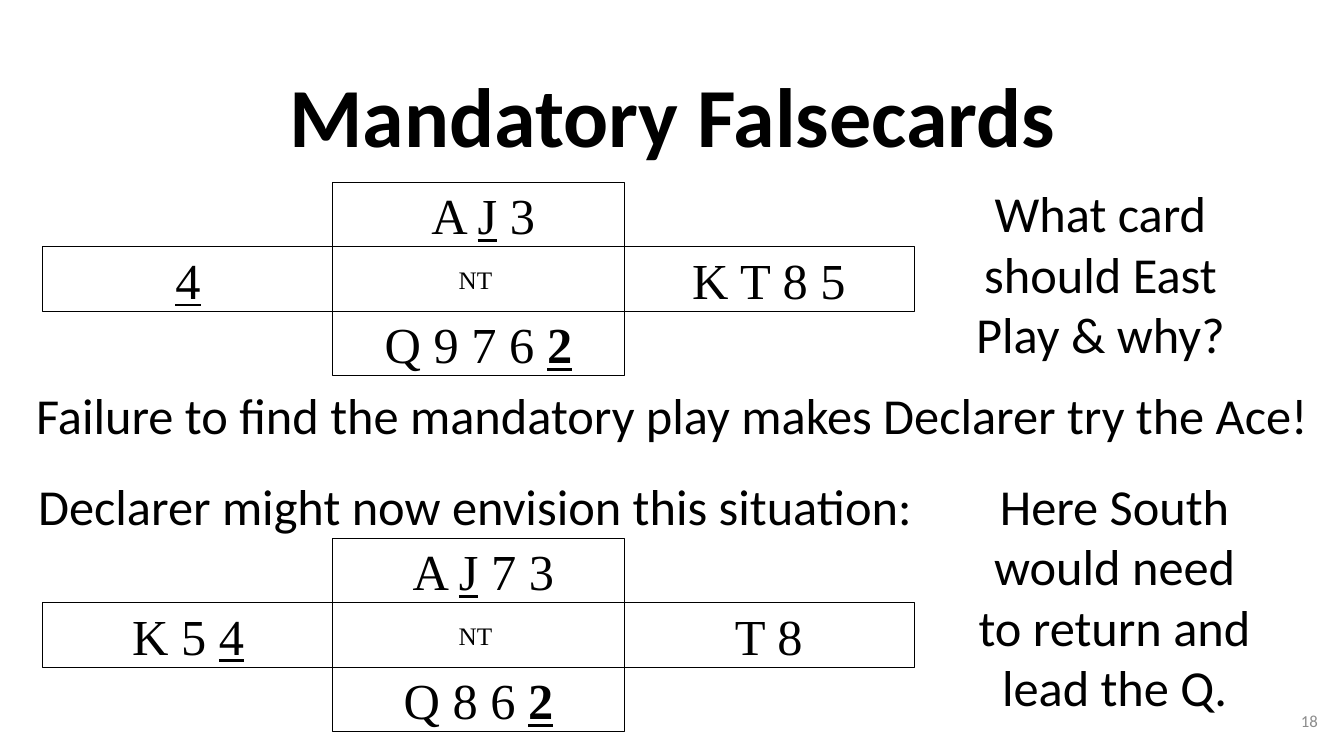
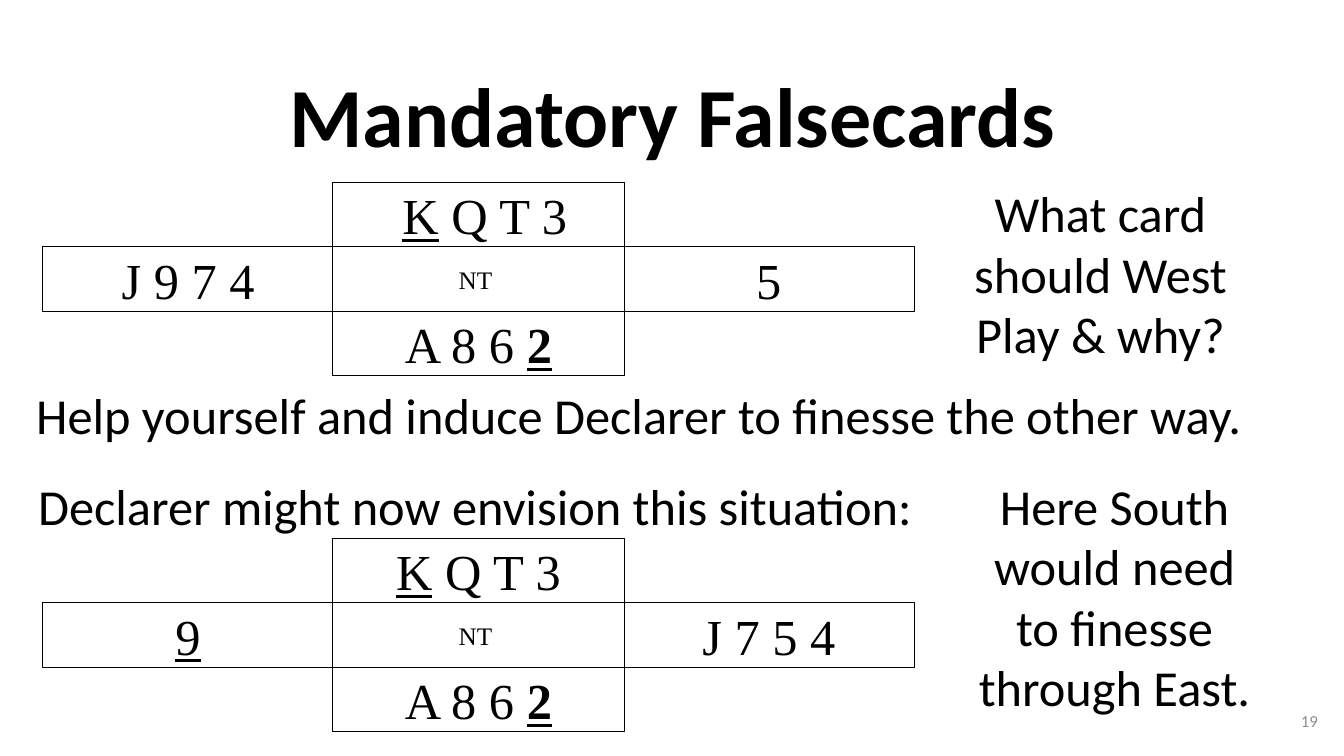
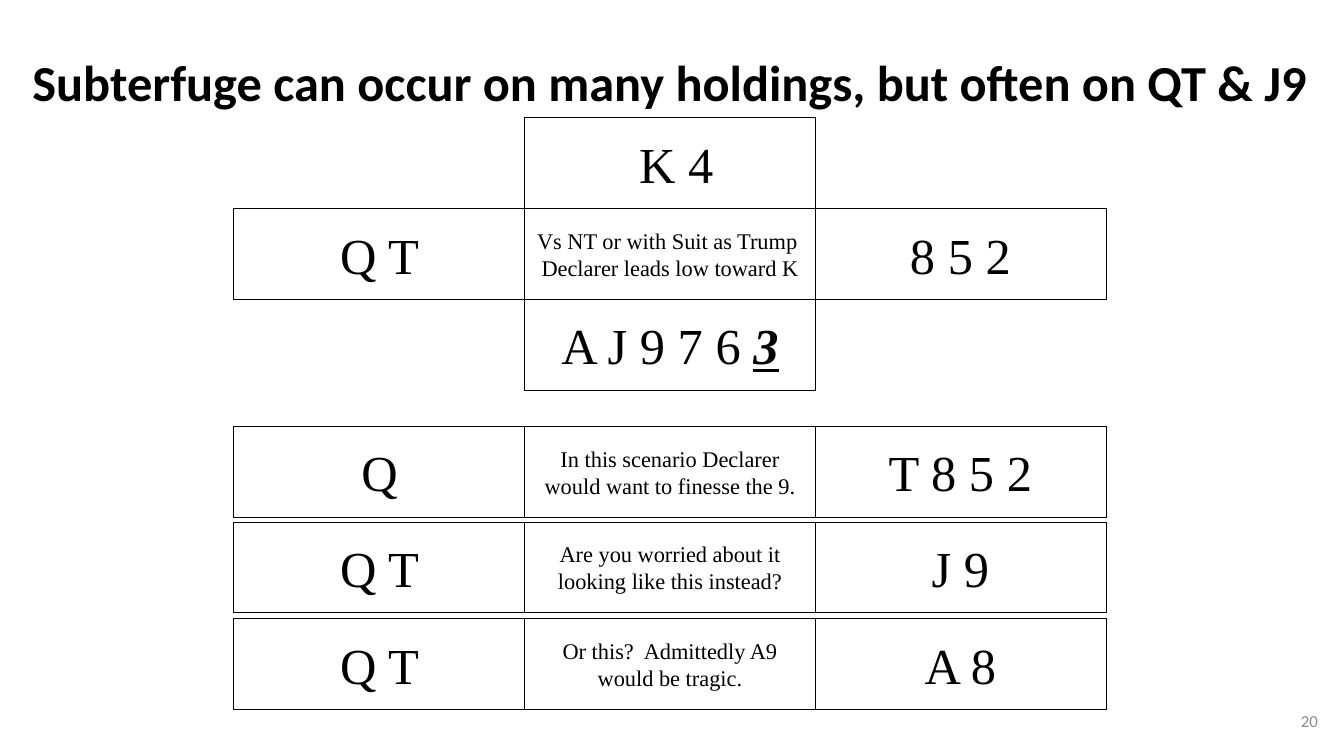
from dataclasses import dataclass
from typing import NamedTuple

from pptx import Presentation
from pptx.dml.color import RGBColor
from pptx.enum.shapes import MSO_SHAPE
from pptx.enum.text import MSO_ANCHOR, PP_ALIGN
from pptx.util import Inches, Pt

BLACK = RGBColor(0x00, 0x00, 0x00)
WHITE = RGBColor(0xFF, 0xFF, 0xFF)
GRAY = RGBColor(0x8C, 0x8C, 0x8C)
TEXT_FONT = "Calibri"
CARD_FONT = "Times New Roman"
BODY_SIZE = 36

RECTANGLE = MSO_SHAPE.RECTANGLE
TOP, MIDDLE = MSO_ANCHOR.TOP, MSO_ANCHOR.MIDDLE
LEFT, CENTER, RIGHT = PP_ALIGN.LEFT, PP_ALIGN.CENTER, PP_ALIGN.RIGHT

CELL_WIDTH = 2.89
COLUMN_STEP = 2.88


class Run(NamedTuple):
    text: str
    underline: bool = False
    bold: bool = False
    italic: bool = False


Hand = tuple[Run, ...]


@dataclass
class Deal:
    """Hands around a central note; north and south may be absent."""
    west: Hand
    east: Hand
    notes: tuple[str, ...]
    north: Hand = ()
    south: Hand = ()


@dataclass
class DealGrid:
    left: float
    row_height: float
    note_size: int


@dataclass
class FalsecardSlide:
    question: str
    advice: str
    conclusion: str
    actual: Deal
    envisioned: Deal
    number: int


def hand(text: str) -> Hand:
    return (Run(text),)


def played(card: str) -> Run:
    return Run(card, underline=True)


def led(card: str, italic: bool = False) -> Run:
    return Run(card, underline=True, bold=True, italic=italic)


# Text
def add_text(slide, box: tuple[float, float, float, float], text: str,
             size: int = BODY_SIZE, align=LEFT, anchor=TOP, bold: bool = False,
             color: RGBColor = BLACK, spacing: float = 1.0) -> None:
    tf = slide.shapes.add_textbox(*map(Inches, box)).text_frame
    tf.word_wrap = True
    tf.vertical_anchor = anchor
    p = tf.paragraphs[0]
    p.text = text
    p.alignment = align
    p.line_spacing = spacing
    p.font.name = TEXT_FONT
    p.font.size = Pt(size)
    p.font.bold = bold
    p.font.color.rgb = color


def add_number(slide, number: int) -> None:
    add_text(slide, (10.17, 6.95, 3, 0.4), str(number), 12, RIGHT, MIDDLE,
             color=GRAY)


# Card diagrams
def add_cell(shapes, left: float, top: float, height: float,
             lines: list[Hand], size: int) -> None:
    sp = shapes.add_shape(RECTANGLE, Inches(left), Inches(top),
                          Inches(CELL_WIDTH), Inches(height))
    sp.shadow.inherit = False
    sp.fill.solid()
    sp.fill.fore_color.rgb = WHITE
    sp.line.color.rgb = BLACK
    sp.line.width = Pt(0.75)
    tf = sp.text_frame
    tf.word_wrap = True
    tf.vertical_anchor = MIDDLE
    for i, line in enumerate(lines):
        p = tf.add_paragraph() if i else tf.paragraphs[0]
        p.alignment = CENTER
        p.font.name = CARD_FONT
        p.font.size = Pt(size)
        p.font.color.rgb = BLACK
        for run in line:
            r = p.add_run()
            r.text = run.text
            if run.underline:
                r.font.underline = True
            if run.bold:
                r.font.bold = True
            if run.italic:
                r.font.italic = True


def add_deal(slide, deal: Deal, grid: DealGrid, middle_top: float) -> None:
    shapes = slide.shapes.add_group_shape().shapes
    # Column, row relative to the middle, contents
    hands = ((1, -1, deal.north), (0, 0, deal.west),
             (2, 0, deal.east), (1, 1, deal.south))
    for column, row, cards in hands:
        if cards:
            add_cell(shapes, grid.left + column * COLUMN_STEP,
                     middle_top + row * grid.row_height, grid.row_height,
                     [cards], BODY_SIZE)
    add_cell(shapes, grid.left + COLUMN_STEP, middle_top, grid.row_height,
             [hand(note) for note in deal.notes], grid.note_size)


# Slides
def add_falsecards(prs, content: FalsecardSlide) -> None:
    slide = prs.slides.add_slide(prs.slide_layouts[6])
    grid = DealGrid(left=0.42, row_height=0.64, note_size=18)
    add_text(slide, (1.67, 0.44, 10, 1.51), "Mandatory Falsecards", 60,
             CENTER, MIDDLE, bold=True, spacing=0.9)
    add_text(slide, (0.28, 4.66, 8.96, 0.8),
             "Declarer might now envision this situation:")
    add_deal(slide, content.actual, grid, 2.45)
    add_deal(slide, content.envisioned, grid, 5.98)
    add_text(slide, (9.38, 1.76, 3.07, 1.97), content.question, align=CENTER)
    add_text(slide, (9.52, 4.66, 3.07, 2.62), content.conclusion, align=CENTER)
    add_text(slide, (0.26, 3.76, 13.08, 0.8), content.advice)
    add_number(slide, content.number)


def add_subterfuge(prs, deals: dict[float, Deal], number: int) -> None:
    slide = prs.slides.add_slide(prs.slide_layouts[6])
    grid = DealGrid(left=2.32, row_height=0.9, note_size=16)
    add_text(slide, (0.15, 0.46, 12.99, 0.72),
             "Subterfuge can occur on many holdings, but often on QT & J9",
             align=CENTER, bold=True)
    for middle_top, deal in deals.items():
        add_deal(slide, deal, grid, middle_top)
    add_number(slide, number)


NO_TRUMP = ("NT ",)

FALSECARD_SLIDES = (
    FalsecardSlide(
        question="What card should East Play & why?",
        advice="Failure to find the mandatory play makes Declarer try the Ace!",
        conclusion="Here South would need to return and lead the Q.",
        actual=Deal(north=(Run(" A "), played("J"), Run(" 3")),
                    west=(played("4"),), east=hand("K T 8 5"),
                    south=(Run("Q 9 7 6 "), led("2")), notes=NO_TRUMP),
        envisioned=Deal(north=(Run(" A "), played("J"), Run(" 7 3")),
                        west=(Run("K 5 "), played("4")), east=hand("T 8"),
                        south=(Run("Q 8 6 "), led("2")), notes=NO_TRUMP),
        number=18),
    FalsecardSlide(
        question="What card should West Play & why?",
        advice="Help yourself and induce Declarer to finesse the other way.",
        conclusion="Here South would need to finesse through East.",
        actual=Deal(north=(Run(" "), played("K"), Run(" Q T 3")),
                    west=hand("J 9 7 4"), east=hand("5"),
                    south=(Run("A 8 6 "), led("2")), notes=NO_TRUMP),
        envisioned=Deal(north=(played("K"), Run(" Q T 3")),
                        west=(played("9"),), east=hand("J 7 5 4"),
                        south=(Run("A 8 6 "), led("2")), notes=NO_TRUMP),
        number=19),
)

# Deals by the top of their middle row
SUBTERFUGE_DEALS = {
    2.07: Deal(north=hand(" K 4"), west=hand("Q T"), east=hand("8 5 2"),
               south=(Run("A J 9 7 6 "), led("3", italic=True)),
               notes=("Vs NT or with Suit as Trump ",
                      "Declarer leads low toward K")),
    4.23: Deal(west=hand("Q"), east=hand("T 8 5 2"),
               notes=("In this scenario Declarer would want to finesse the 9.",)),
    5.18: Deal(west=hand("Q T"), east=hand("J 9"),
               notes=("Are you worried about it looking like this instead?",)),
    6.14: Deal(west=hand("Q T"), east=hand("A 8"),
               notes=("Or this?  Admittedly A9 would be tragic.",)),
}


def main() -> None:
    prs = Presentation()
    prs.slide_width, prs.slide_height = Inches(13.33), Inches(7.5)
    for content in FALSECARD_SLIDES:
        add_falsecards(prs, content)
    add_subterfuge(prs, SUBTERFUGE_DEALS, 20)
    prs.save("out.pptx")


if __name__ == "__main__":
    main()
